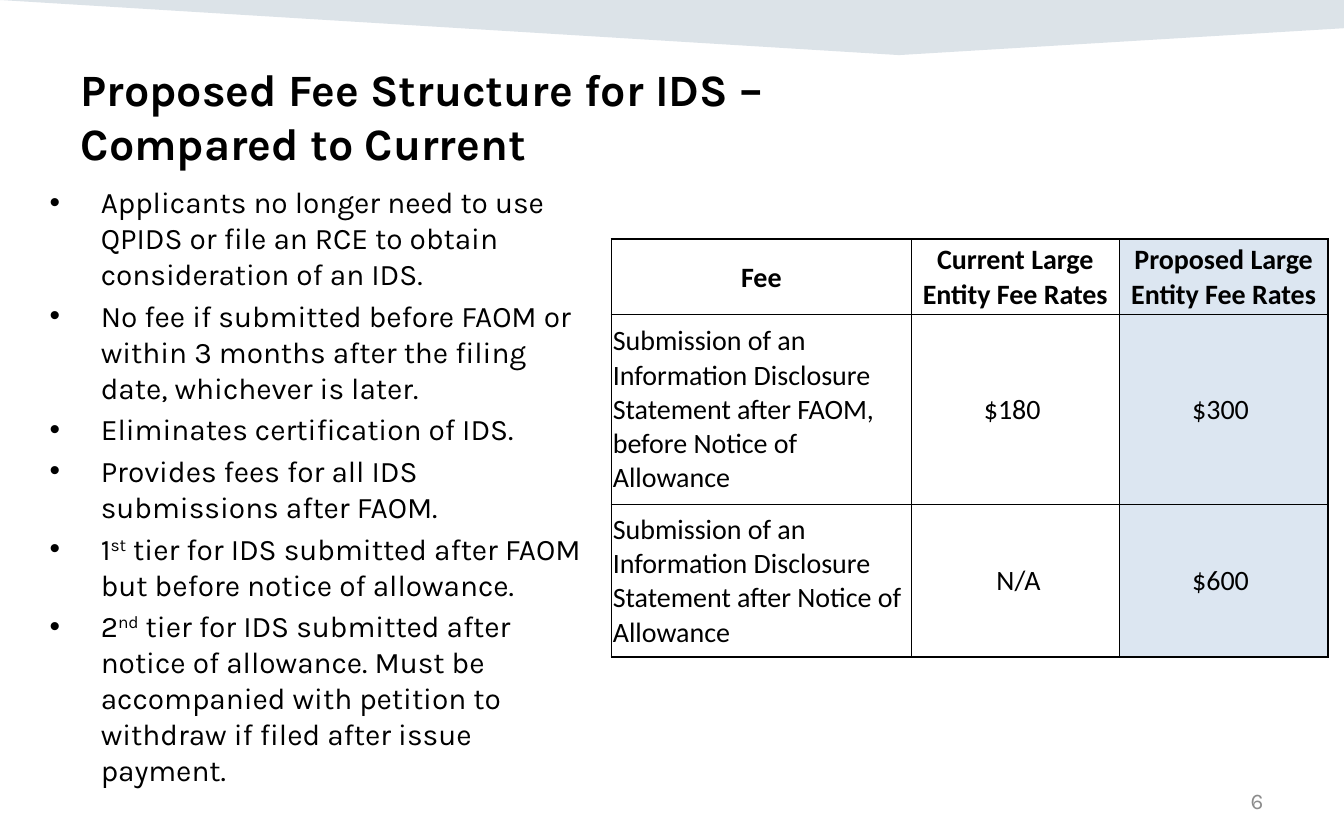
from lxml.etree import SubElement
from pptx import Presentation
from pptx.dml.color import RGBColor
from pptx.enum.text import MSO_ANCHOR, MSO_AUTO_SIZE, PP_ALIGN
from pptx.oxml.ns import qn
from pptx.util import Inches, Pt

TITLE = ["Proposed Fee Structure for IDS – ", "Compared to Current"]
BULLETS = [
    "Applicants no longer need to use QPIDS or file an RCE to obtain consideration of an IDS.",
    "No fee if submitted before FAOM or within 3 months after the filing date, whichever is later.",
    "Eliminates certification of IDS.",
    "Provides fees for all IDS submissions after FAOM.",
    "1^st^ tier for IDS submitted after FAOM but before notice of allowance.",
    "2^nd^ tier for IDS submitted after notice of allowance. Must be accompanied "
    "with petition to withdraw if filed after issue payment.",
]
FEES = [
    ["Fee", "Current Large Entity Fee Rates", "Proposed Large Entity Fee Rates"],
    ["Submission of an Information Disclosure Statement after FAOM, "
     "before Notice of Allowance", "$180 ", "$300 "],
    ["Submission of an Information Disclosure Statement after Notice of Allowance",
     " N/A", "$600 "],
]
PAGE_NUMBER = "6"
COLUMN_WIDTHS = [2.23, 1.55, 1.55]
ROW_HEIGHTS = [0.56, 1.41, 1.14]
COLUMN_FILLS = ["FFFFFF", "FFFFFF", "DCE6F1"]
BANNER_POINTS = [(0, 0), (10, 0), (10, 0.21), (6.69, 0.41)]
TITLE_BOX = (0.5, 0.41, 9, 0.51)
BODY_BOX = (0.27, 1.32, 4.28, 4.81)
NUMBER_BOX = (7.17, 5.79, 2.33, 0.33)
TABLE_BOX = (4.55, 1.78, sum(COLUMN_WIDTHS), sum(ROW_HEIGHTS))
TITLE_FONT = {"name": "Karla", "size": Pt(24), "bold": True}
BODY_FONT = {"name": "Karla", "size": Pt(16)}
NUMBER_FONT = {"name": "Karla", "size": Pt(12)}
TABLE_FONT = {"name": "Calibri", "size": Pt(15)}


def color(value):
    return RGBColor.from_string(value)


def set_attributes(target, values):
    for name, value in values.items():
        setattr(target, name, value)


def add_run(paragraph, text, font, font_color="000000"):
    run = paragraph.add_run()
    run.text = text
    set_attributes(run.font, font)
    run.font.color.rgb = color(font_color)
    return run


def place(shape, box, anchor=MSO_ANCHOR.TOP):
    set_attributes(shape, dict(zip(("left", "top", "width", "height"), map(Inches, box))))
    set_attributes(shape.text_frame, {
        "word_wrap": True, "auto_size": MSO_AUTO_SIZE.NONE, "vertical_anchor": anchor})
    return shape.text_frame


def add_banner(slide):
    start, *others = [(Inches(x), Inches(y)) for x, y in BANNER_POINTS]
    builder = slide.shapes.build_freeform(*start)
    builder.add_line_segments(others, close=True)
    banner = builder.convert_to_shape()
    banner.shadow.inherit = False
    banner.fill.solid()
    banner.fill.fore_color.rgb = color("164469")
    banner.line.fill.background()
    fill_color = banner.fill._xPr.find(".//" + qn("a:srgbClr"))
    SubElement(fill_color, qn("a:alpha"), val="15000")
    slide.shapes._spTree.insert(2, banner._element)


def add_title(slide):
    paragraph = place(slide.shapes.title, TITLE_BOX).paragraphs[0]
    paragraph.alignment = PP_ALIGN.LEFT
    add_run(paragraph, TITLE[0], TITLE_FONT)
    paragraph.add_line_break()
    line_break = paragraph._p.find(qn("a:br"))
    SubElement(line_break, qn("a:rPr"), sz="2400")
    add_run(paragraph, TITLE[1], TITLE_FONT)


def add_bullets(slide):
    frame = place(slide.placeholders[1], BODY_BOX)
    for index, text in enumerate(BULLETS):
        paragraph = frame.add_paragraph() if index else frame.paragraphs[0]
        properties = paragraph._p.get_or_add_pPr()
        properties.set("marL", str(Inches(0.38)))
        properties.set("indent", str(-Inches(0.38)))
        SubElement(properties, qn("a:buFont"), typeface="Arial")
        SubElement(properties, qn("a:buChar"), char="•")
        paragraph.space_before = Pt(3.2 if index else 0)
        for part, piece in enumerate(text.split("^")):
            run = add_run(paragraph, piece, BODY_FONT)
            if part % 2:
                run.font._element.set("baseline", "30000")


def add_border(cell, side, width):
    line = SubElement(cell._tc.get_or_add_tcPr(), qn(f"a:ln{side}"), w=str(Pt(width)))
    SubElement(SubElement(line, qn("a:solidFill")), qn("a:srgbClr"), val="000000")


def add_fee_table(slide):
    rows, columns = len(FEES), len(COLUMN_WIDTHS)
    table = slide.shapes.add_table(rows, columns, *map(Inches, TABLE_BOX)).table
    for column, width in zip(table.columns, COLUMN_WIDTHS):
        column.width = Inches(width)
    for row, height in zip(table.rows, ROW_HEIGHTS):
        row.height = Inches(height)
    for row, texts in enumerate(FEES):
        for column, text in enumerate(texts):
            cell = table.cell(row, column)
            set_attributes(cell, {
                "vertical_anchor": MSO_ANCHOR.MIDDLE, "margin_left": Inches(0.01),
                "margin_right": Inches(0.01), "margin_top": Inches(0.01), "margin_bottom": 0})
            outer = {"L": column == 0, "R": column == columns - 1,
                     "T": row == 0, "B": row == rows - 1}
            for side, is_outer in outer.items():
                add_border(cell, side, 1 if is_outer else 0.5)
            cell.fill.solid()
            cell.fill.fore_color.rgb = color(COLUMN_FILLS[column])
            paragraph = cell.text_frame.paragraphs[0]
            paragraph.alignment = PP_ALIGN.LEFT if row and not column else PP_ALIGN.CENTER
            add_run(paragraph, text, {**TABLE_FONT, "bold": row == 0})


def add_page_number(slide):
    box = slide.shapes.add_textbox(*map(Inches, NUMBER_BOX))
    paragraph = place(box, NUMBER_BOX, MSO_ANCHOR.MIDDLE).paragraphs[0]
    paragraph.alignment = PP_ALIGN.RIGHT
    add_run(paragraph, PAGE_NUMBER, NUMBER_FONT, "8C8C8C")


def main():
    """Build the slide comparing proposed and current IDS fees."""
    presentation = Presentation()
    presentation.slide_width, presentation.slide_height = Inches(10), Inches(6.25)
    slide = presentation.slides.add_slide(presentation.slide_layouts[1])
    for add_part in (add_banner, add_title, add_page_number, add_bullets, add_fee_table):
        add_part(slide)
    presentation.save("out.pptx")


if __name__ == "__main__":
    main()
